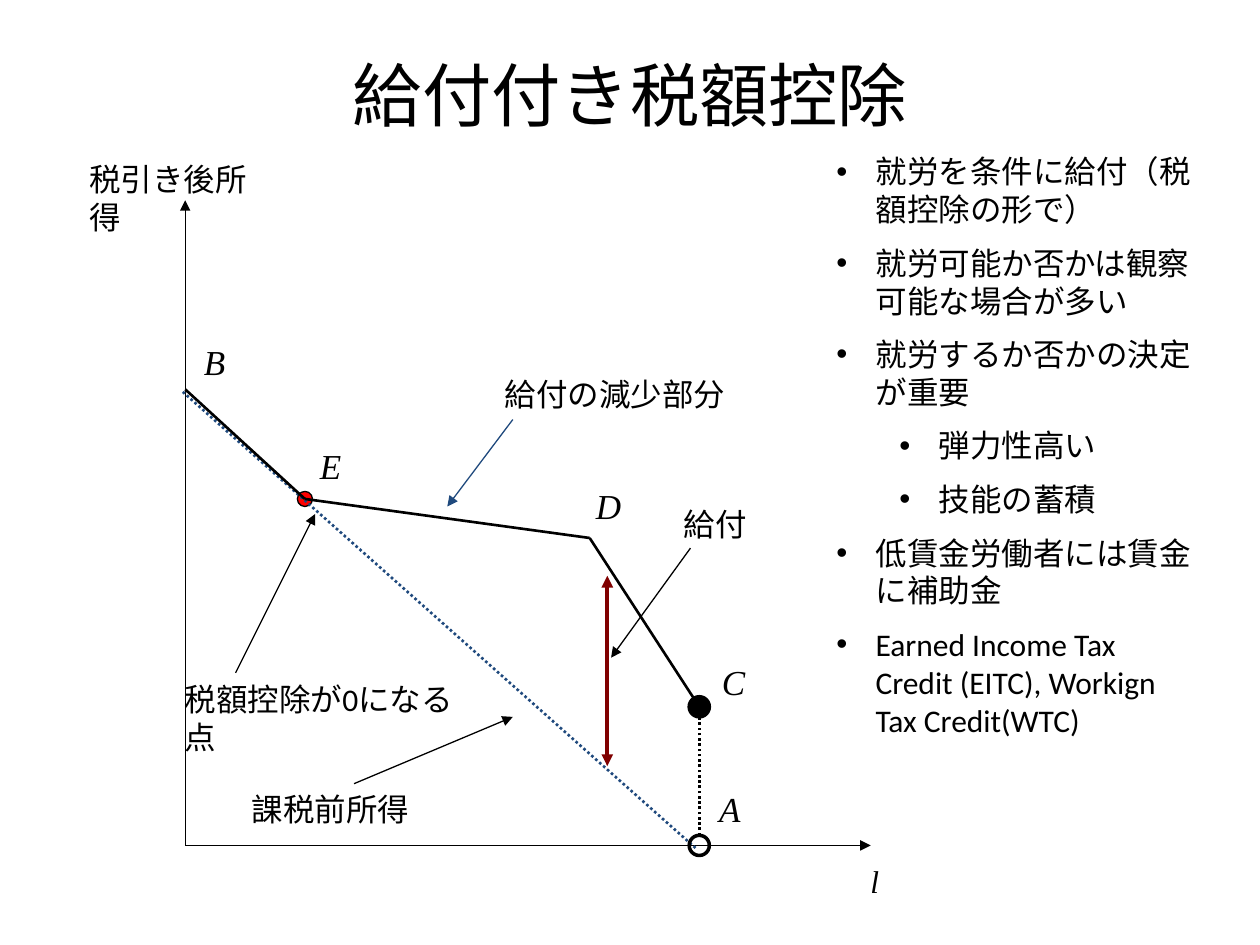
from lxml.etree import SubElement
from pptx import Presentation
from pptx.dml.color import RGBColor
from pptx.enum.dml import MSO_LINE
from pptx.enum.shapes import MSO_CONNECTOR, MSO_SHAPE
from pptx.enum.text import MSO_ANCHOR, MSO_AUTO_SIZE, PP_ALIGN
from pptx.oxml.ns import qn
from pptx.util import Inches, Pt

COLS, ROWS = 100, 75
BLACK, BLUE, RED, MAROON = "000000", "1F497D", "FF0000", "800000"
HEAD = {"size": Pt(39.6), "name": "Calibri"}
BODY = {"size": Pt(18), "name": "Calibri"}
AXIS = {"size": Pt(18), "name": "Times New Roman"}
POINT = {"size": Pt(20), "name": "Times New Roman", "italic": True}


def color(code):
    return RGBColor.from_string(code)


class Board:
    """Holds the slide and its style; lengths are grid columns and rows."""

    def __init__(self, deck):
        self.slide = deck.slides.add_slide(deck.slide_layouts[5])
        self.shapes = self.slide.shapes
        self.col = deck.slide_width / COLS
        self.row = deck.slide_height / ROWS

    def place(self, *nums):
        """Turn alternating columns and rows into lengths."""
        return [round(n * (self.row if i % 2 else self.col))
                for i, n in enumerate(nums)]

    def font(self, run, style):
        for key, value in style.items():
            setattr(run.font, key, value)
        run.font.color.rgb = color(BLACK)

    def title(self, text, box):
        shape = self.shapes.title
        shape.left, shape.top, shape.width, shape.height = self.place(*box)
        frame = shape.text_frame
        frame.vertical_anchor = MSO_ANCHOR.MIDDLE
        para = frame.paragraphs[0]
        para.alignment = PP_ALIGN.CENTER
        run = para.add_run()
        run.text = text
        self.font(run, HEAD)

    def text(self, text, box, style=BODY):
        frame = self.shapes.add_textbox(*self.place(*box)).text_frame
        frame.word_wrap = True
        frame.auto_size = MSO_AUTO_SIZE.SHAPE_TO_FIT_TEXT
        run = frame.paragraphs[0].add_run()
        run.text = text
        self.font(run, style)
        return frame

    def bullets(self, items, box):
        """Fill one box with (level, text) points."""
        (_, first), *rest = items
        frame = self.text(first, box)
        for level, text in rest:
            para = frame.add_paragraph()
            para.level = level
            run = para.add_run()
            run.text = text
            self.font(run, BODY)
        for para in frame.paragraphs:
            para.space_before = Pt(9)
            props = para._p.get_or_add_pPr()
            props.set("marL", str(Inches(0.31 + 0.5 * para.level)))
            props.set("indent", str(Inches(-0.31)))
            SubElement(props, qn("a:buFont")).set("typeface", "Arial")
            SubElement(props, qn("a:buChar")).set("char", "•")

    def line(self, start, end, tint=BLACK, width=1.5, dots=False, ends=()):
        """Draw a line; ends names its arrowheads, headEnd before tailEnd."""
        link = self.shapes.add_connector(
            MSO_CONNECTOR.STRAIGHT, *self.place(*start, *end))
        link.line.color.rgb = color(tint)
        link.line.width = Pt(width)
        if dots:
            link.line.dash_style = MSO_LINE.ROUND_DOT
        stroke = link.line._get_or_add_ln()
        for name in ends:
            SubElement(stroke, qn(f"a:{name}")).set("type", "triangle")
        SubElement(link._element.spPr, qn("a:effectLst"))
        return link

    def arrow(self, start, end, tint=BLACK):
        self.line(start, end, tint, 0.75, ends=("tailEnd",))

    def dot(self, mid, size, fill=None, width=2):
        x, y = mid
        shape = self.shapes.add_shape(MSO_SHAPE.OVAL, *self.place(
            x - size / 2, y - size / 2, size, size))
        shape.shadow.inherit = False
        if fill:
            shape.fill.solid()
            shape.fill.fore_color.rgb = color(fill)
        else:
            shape.fill.background()
        shape.line.color.rgb = color(BLACK)
        shape.line.width = Pt(width)
        return shape


def main():
    deck = Presentation()
    deck.slide_width, deck.slide_height = Inches(10), Inches(7.5)
    board = Board(deck)
    board.title("給付付き税額控除", (6.9, 4, 86.2, 6.9))
    board.bullets([
        (0, "就労を条件に給付（税額控除の形で）"),
        (0, "就労可能か否かは観察可能な場合が多い"),
        (0, "就労するか否かの決定が重要"),
        (1, "弾力性高い"),
        (1, "技能の蓄積"),
        (0, "低賃金労働者には賃金に補助金"),
        (0, "Earned Income Tax Credit (EITC), Workign Tax Credit(WTC)"),
    ], (65.4, 11.6, 30.8, 49.5))

    # Axes
    origin = (14.7, 67.1)
    board.arrow(origin, (69.1, 67.1))
    board.arrow(origin, (14.7, 15.9))
    board.text("l", (68.1, 67.9, 6.6, 4), AXIS | {"italic": True})
    board.text("税引き後所得", (6.1, 12.2, 16.8, 4.4), AXIS)

    # Budget lines
    a, b, c = (55.5, 67.1), (14.7, 30.9), (55.5, 56.1)
    d, e = (46.8, 42.7), (24.2, 39.6)
    board.line(c, d)
    board.dot(c, 1.6, BLACK)
    board.dot(e, 1.2, RED, 0.75)
    board.line((55.2, 67.3), (14.5, 31.1), BLUE, dots=True)
    ring = board.dot(a, 1.6)
    drop = board.line(a, (55.5, 56.9), dots=True)
    drop.begin_connect(ring, 0)
    board.line(d, e)
    board.line(e, b)
    board.line((48.2, 45.7), (48.2, 60.8), MAROON, 2.25,
               ends=("headEnd", "tailEnd"))

    # Notes, each with its arrow
    for text, box, start, end, tint in [
        ("課税前所得", (19, 62.2, 16.2, 4), (28.1, 62.2), (40.7, 56.9), BLACK),
        ("給付", (53.3, 39.6, 8.1, 4), (54.8, 43.5), (48.5, 52.2), BLACK),
        ("給付の減少部分", (39.1, 29.3, 26, 4), (40.7, 33.3), (35.5, 40.2),
         BLUE),
        ("税額控除が0になる点", (13.7, 53.5, 25.4, 4), (18.7, 53.4),
         (25, 40.8), BLACK),
    ]:
        board.text(text, box)
        board.arrow(start, end, tint)

    # Point names
    for name, x, y, width in [("A", 56.1, 62, 3.7), ("B", 15.2, 26.5, 3.7),
                              ("C", 56.3, 51.9, 3.9), ("D", 46.3, 38, 4.1),
                              ("E", 24.4, 34.8, 3.7)]:
        board.text(name, (x, y, width, 4.4), POINT)

    deck.save("out.pptx")


if __name__ == "__main__":
    main()
